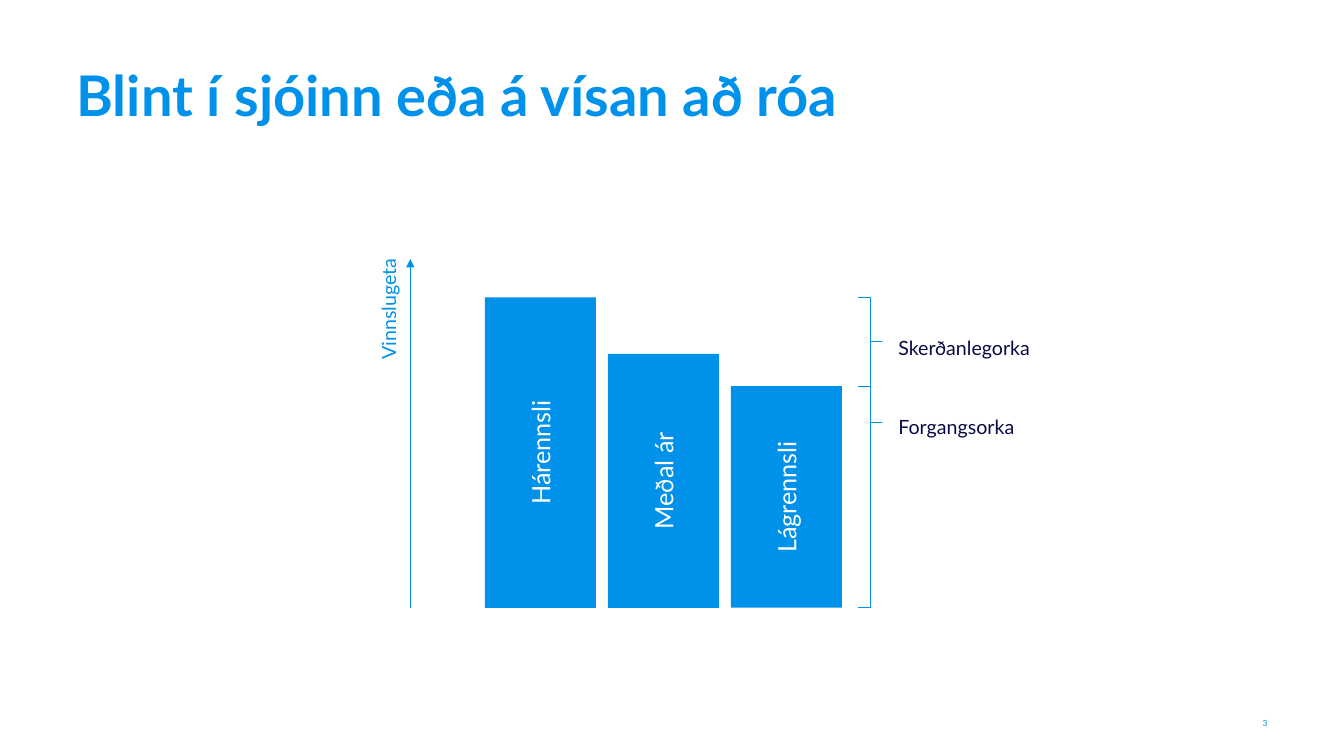
from lxml.etree import SubElement
from pptx import Presentation
from pptx.dml.color import RGBColor
from pptx.enum.shapes import MSO_CONNECTOR as Line, MSO_SHAPE as Shape
from pptx.enum.text import MSO_ANCHOR as Anchor, PP_ALIGN as Align
from pptx.oxml.ns import qn
from pptx.util import Inches, Pt

BLUE = RGBColor(0x00, 0x91, 0xEB)
NAVY = RGBColor(0x0A, 0x0A, 0x46)
WHITE = RGBColor(0xFF, 0xFF, 0xFF)

BASE = 6.03  # foot of bars, braces and axis
BAR_X, BAR_W, BAR_STEP = 4.81, 1.1, 1.22
BARS = [("Hárennsli", 2.95), ("Meðal ár", 3.51), ("Lágrennsli", 3.83)]


def write(shape, text, size=14, color=BLUE, bold=False, align=Align.LEFT,
          anchor=Anchor.TOP, space=None):
    frame = shape.text_frame
    frame.word_wrap = True
    frame.vertical_anchor = anchor
    frame.margin_left = frame.margin_right = 0
    frame.margin_top = frame.margin_bottom = 0
    par = frame.paragraphs[0]
    par.text = text
    par.alignment = align
    par.line_spacing = space
    font = par.font
    font.name, font.size, font.bold = "Lato", Pt(size), bold
    font.color.rgb = color


def place(shape, x, y, w, h):
    shape.left, shape.top = Inches(x), Inches(y)
    shape.width, shape.height = Inches(w), Inches(h)


def add_label(slide, text, x, y, w, h, turn=0, **style):
    box = slide.shapes.add_textbox(Inches(x), Inches(y), Inches(w), Inches(h))
    box.rotation = turn
    write(box, text, **style)


def add_bar(slide, text, x, top):
    bar = slide.shapes.add_shape(Shape.RECTANGLE, Inches(x), Inches(top),
                                 Inches(BAR_W), Inches(BASE - top))
    bar.shadow.inherit = False
    bar.fill.solid()
    bar.fill.fore_color.rgb = BLUE
    bar.line.fill.background()
    write(bar, text, size=18, color=WHITE, align=Align.CENTER,
          anchor=Anchor.MIDDLE)
    bar.text_frame._txBody.bodyPr.set("vert", "vert270")


def add_brace(slide, top, foot, point):
    brace = slide.shapes.add_shape(Shape.RIGHT_BRACE, Inches(8.51), Inches(top),
                                   Inches(0.24), Inches(foot - top))
    brace.shadow.inherit = False
    brace.adjustments[0], brace.adjustments[1] = 0, point
    brace.fill.background()
    brace.line.color.rgb = BLUE
    brace.line.width = Pt(0.5)


def add_axis(slide, x, top):
    axis = slide.shapes.add_connector(Line.STRAIGHT, Inches(x), Inches(BASE),
                                      Inches(x), Inches(top))
    axis.line.color.rgb = BLUE
    axis.line.width = Pt(0.5)
    SubElement(axis.line._get_or_add_ln(), qn("a:tailEnd"), type="triangle")
    SubElement(axis._element.spPr, qn("a:effectLst"))


def main():
    deck = Presentation()
    deck.slide_width, deck.slide_height = Inches(13.33), Inches(7.5)
    slide = deck.slides.add_slide(deck.slide_layouts[5])

    # Title and page number
    title = slide.shapes.title
    place(title, 0.76, 0.6, 10.87, 1.34)
    write(title, "Blint í sjóinn eða á vísan að róa", size=40, bold=True)
    add_label(slide, "3", 12.26, 7.06, 0.31, 0.16, size=6,
              align=Align.RIGHT, anchor=Anchor.BOTTOM)

    # Bars
    for i, (name, top) in enumerate(BARS):
        add_bar(slide, name, BAR_X + i * BAR_STEP, top)

    # Braces from the highest to the lowest bar, and on to the base
    high, low = BARS[0][1], BARS[-1][1]
    add_brace(slide, low, BASE, 0.164)
    add_brace(slide, high, low, 0.5)
    add_label(slide, "Forgangsorka", 8.91, 4.06, 1.65, 0.47,
              color=NAVY, space=1.25)
    add_label(slide, "Skerðanlegorka", 8.91, 3.27, 1.65, 0.31,
              color=NAVY, space=1.25)

    # Axis
    add_axis(slide, 4.07, 2.57)
    add_label(slide, "Vinnslugeta", 3.08, 3.16, 1.5, 0.31, turn=270,
              align=Align.RIGHT, space=1.25)

    deck.save("out.pptx")


if __name__ == "__main__":
    main()
